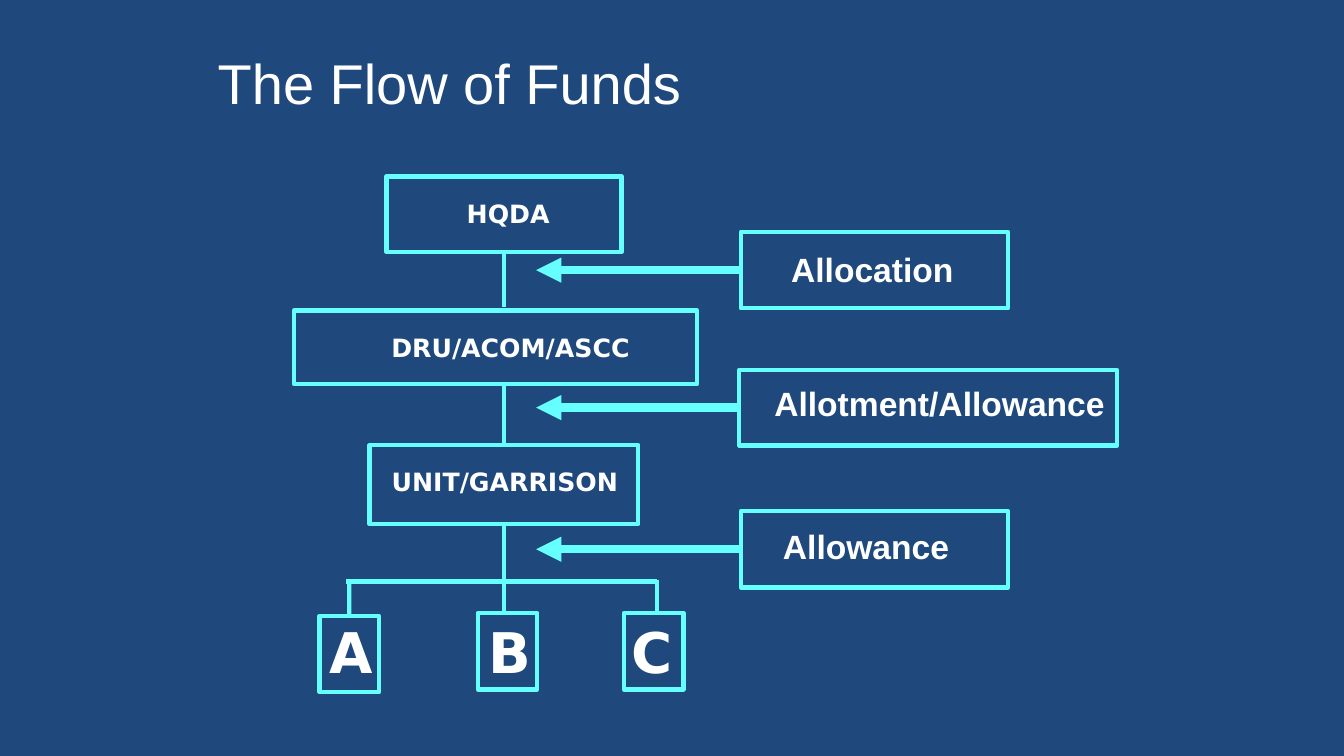
from lxml import etree
from pptx import Presentation
from pptx.dml.color import RGBColor
from pptx.enum.shapes import MSO_CONNECTOR as Connector, MSO_SHAPE as Shape
from pptx.enum.text import PP_ALIGN as Align
from pptx.oxml.ns import qn
from pptx.util import Pt

COLORS = {"background": "1F497D", "line": "66FFFF", "text": "FFFFFF"}
BOTTOM, LEFT, TOP = 2, 1, 0


def color(name):
    return RGBColor.from_string(COLORS[name])


def add_label(slide, text, box, size, font="Arial", bold=True, align=Align.LEFT):
    label = slide.shapes.add_textbox(*(Pt(v) for v in box))
    label.text_frame.word_wrap = True
    paragraph = label.text_frame.paragraphs[0]
    paragraph.text = text
    paragraph.alignment = align
    paragraph.font.name = font
    paragraph.font.size = Pt(size)
    paragraph.font.bold = bold
    paragraph.font.color.rgb = color("text")


def add_frame(slide, box):
    frame = slide.shapes.add_shape(Shape.RECTANGLE, *(Pt(v) for v in box))
    frame.shadow.inherit = False
    frame.fill.background()
    frame.line.color.rgb = color("line")
    frame.line.width = Pt(3)
    return frame


def add_line(slide, start, end, width=3, arrow=False):
    line = slide.shapes.add_connector(
        Connector.STRAIGHT, *(Pt(v) for v in (*start, *end)))
    line.line.color.rgb = color("line")
    line.line.width = Pt(width)
    properties = line.element.spPr
    if arrow:
        etree.SubElement(properties.find(qn("a:ln")), qn("a:tailEnd"), type="triangle")
    etree.SubElement(properties, qn("a:effectLst"))
    return line


def add_title(slide, box):
    add_label(slide, "The Flow of Funds", box, 40, bold=False, align=Align.CENTER)


def add_chain(slide, box):
    """Three command levels on one trunk; returns the lowest level's frame."""
    left, top, width, _ = box
    trunk = left + 150
    # name, frame (x, y, w, h), label (x, y, w)
    levels = [
        ("HQDA", (66, 0, 168, 54), (48, 12, 210)),
        ("DRU/ACOM/ASCC", (0, 95.8, width, 52.6), (11.6, 108, 286)),
        ("UNIT/GARRISON", (54, 192, 192, 56.4), (54.6, 203.8, 192)),
    ]
    frames = []
    for name, (x, y, w, h), (label_x, label_y, label_w) in levels:
        frames.append(add_frame(slide, (left + x, top + y, w, h)))
        add_label(slide, name, (left + label_x, top + label_y, label_w, 28.8),
                  18, "DejaVu Sans", align=Align.CENTER)
    headquarters, _, unit = frames

    upper = add_line(slide, (trunk, top + 54), (trunk, top + 93.6))
    upper.begin_connect(headquarters, BOTTOM)
    lower = add_line(slide, (trunk, top + 148.4), (trunk, top + 192))
    lower.end_connect(unit, TOP)
    return unit


def add_activities(slide, box, unit):
    """Activities A, B and C hanging from a bus below the unit."""
    left, top, width, height = box
    bus = top + 41
    row = top + 63.4
    trunk = left + 132
    frame_w, frame_h = 42.5, 54.7
    # name, frame x, frame drop, label x
    activities = [("A", 0.2, 2.1, 0.2), ("B", 113.3, 0, 114), ("C", 217.7, 0, 216.2)]
    frames = []
    for name, x, drop, label_x in activities:
        frames.append(add_frame(slide, (left + x, row + drop, frame_w, frame_h)))
        add_label(slide, name, (left + label_x, row, 43, 55.4), 40, "DejaVu Sans")

    first, last = left + 21.4, left + 241.4
    stem = add_line(slide, (trunk, top), (trunk, bus + 4))
    stem.begin_connect(unit, BOTTOM)
    add_line(slide, (trunk, bus + 4), (trunk, row))
    add_line(slide, (first - 2, bus), (last, bus))
    drop_a = add_line(slide, (first, bus - 1.4), (first, row + 2.1))
    drop_a.end_connect(frames[0], TOP)
    add_line(slide, (last, bus - 1.4), (last, row))


def add_fund_types(slide, box):
    """Fund types at the right, each pointing at its step on the trunk."""
    left, top, _, _ = box
    arrow_tip = 383
    # name, frame (x, y, w, h), label (x, y, w)
    fund_types = [
        ("Allocation", (1.2, 0, 190.8, 54.7), (30, 8.6, 132)),
        ("Allotment/Allowance", (0, 98.6, 270, 54), (18, 104.4, 294)),
        ("Allowance", (1.2, 199.4, 190.8, 54.7), (24.2, 206.6, 144)),
    ]
    for name, (x, y, w, h), (label_x, label_y, label_w) in fund_types:
        frame = add_frame(slide, (left + x, top + y, w, h))
        middle = top + y + h / 2
        arrow = add_line(slide, (left + x, middle), (arrow_tip, middle), 6, arrow=True)
        arrow.begin_connect(frame, LEFT)
        add_label(slide, name, (left + label_x, top + label_y, label_w, 36.7), 24)


def main():
    deck = Presentation()
    deck.slide_width, deck.slide_height = Pt(960), Pt(540)
    slide = deck.slides.add_slide(deck.slide_layouts[6])
    slide.background.fill.solid()
    slide.background.fill.fore_color.rgb = color("background")

    add_title(slide, (113, 31, 416, 55.4))
    unit = add_chain(slide, (210, 126, 288, 248.4))
    add_activities(slide, (228, 374.4, 260, 120), unit)
    add_fund_types(slide, (528, 165.6, 270, 254))
    deck.save("out.pptx")


if __name__ == "__main__":
    main()
